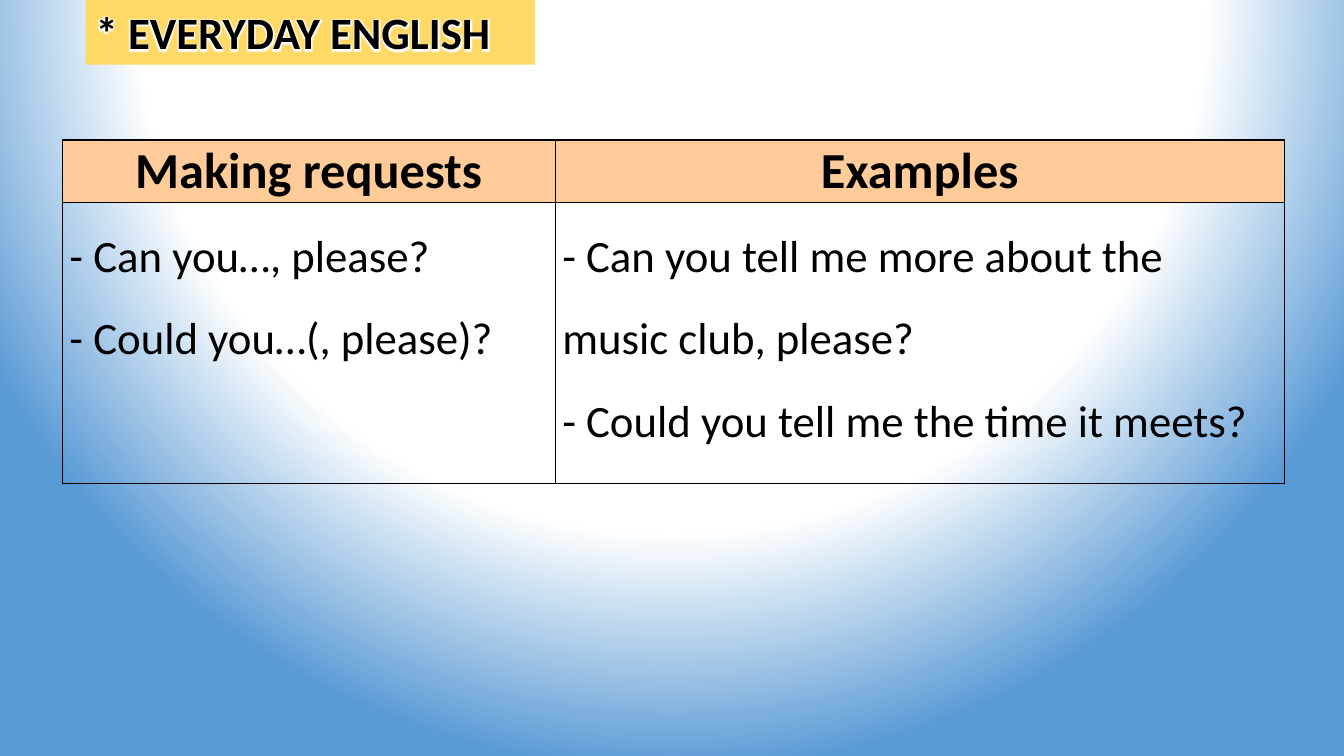
from dataclasses import dataclass

import pptx
import pptx.dml.color
import pptx.enum.shapes
import pptx.enum.text
import pptx.oxml
import pptx.oxml.ns
import pptx.util
from pptx.util import Cm, Pt

RGBColor = pptx.dml.color.RGBColor
PP_ALIGN = pptx.enum.text.PP_ALIGN

BLACK = RGBColor(0x00, 0x00, 0x00)
WHITE = RGBColor(0xFF, 0xFF, 0xFF)
SKY_BLUE = RGBColor(0x5B, 0x9B, 0xD5)
PEACH = RGBColor(0xFF, 0xCC, 0x99)
YELLOW = RGBColor(0xFF, 0xD9, 0x66)

FONT = "Calibri"
NAMESPACE = pptx.oxml.ns.nsdecls("a")


@dataclass(frozen=True)
class Column:
    heading: str
    phrases: tuple[str, ...]
    width: float
    spaces_before: tuple[float, ...]


COLUMNS = (
    Column("Making requests",
           ("- Can you…, please?", "- Could you…(, please)?"),
           12.42, (0, 0)),
    Column("Examples",
           ("- Can you tell me more about the music club, please?",
            "- Could you tell me the time it meets?"),
           18.38, (1.9, 0.5)),
)
ROW_HEIGHTS = (1.57, 7.08)


def write(paragraph, text: str, size: float, bold: bool):
    run = paragraph.add_run()
    run.text = text
    for name, value in {"name": FONT, "size": Pt(size), "bold": bold}.items():
        setattr(run.font, name, value)
    run.font.color.rgb = BLACK
    return run


def paint_background(slide) -> None:
    """Fill the slide with a radial gradient centred above its top edge."""
    slide.background.fill.solid()
    stops = "".join(
        f'<a:gs pos="{percent * 1000}"><a:srgbClr val="{color}"/></a:gs>'
        for percent, color in ((0, WHITE), (69, WHITE), (100, SKY_BLUE)))
    gradient = pptx.oxml.parse_xml(
        f'<a:gradFill {NAMESPACE} rotWithShape="1"><a:gsLst>{stops}</a:gsLst>'
        '<a:path path="circle"><a:fillToRect l="50000" t="-80000" '
        'r="50000" b="180000"/></a:path></a:gradFill>')
    solid = slide.element.find(".//" + pptx.oxml.ns.qn("a:solidFill"))
    solid.getparent().replace(solid, gradient)


def format_cell(cell) -> None:
    """Set the cell's insets and its thin black border."""
    margins = {"margin_left": 0.18, "margin_right": 0.18,
               "margin_top": 0, "margin_bottom": 0}
    for name, value in margins.items():
        setattr(cell, name, Cm(value))
    properties = cell._tc.get_or_add_tcPr()
    for side in "LRTB":
        properties.append(pptx.oxml.parse_xml(
            f'<a:ln{side} {NAMESPACE} w="{Pt(1)}"><a:solidFill>'
            f'<a:srgbClr val="{BLACK}"/></a:solidFill></a:ln{side}>'))


def add_requests_table(slide) -> None:
    table = slide.shapes.add_table(
        len(ROW_HEIGHTS), len(COLUMNS), Cm(1.57), Cm(3.53),
        Cm(sum(column.width for column in COLUMNS)),
        Cm(sum(ROW_HEIGHTS))).table
    table.first_row = table.horz_banding = False
    for row, height in zip(table.rows, ROW_HEIGHTS):
        row.height = Cm(height)

    for index, column in enumerate(COLUMNS):
        table.columns[index].width = Cm(column.width)
        heading, body = table.cell(0, index), table.cell(1, index)
        for cell in (heading, body):
            format_cell(cell)
        heading.fill.solid()
        heading.fill.fore_color.rgb = PEACH
        body.fill.background()

        title = heading.text_frame.paragraphs[0]
        title.alignment = PP_ALIGN.CENTER
        write(title, column.heading, 36, True)
        frame = body.text_frame
        for number, phrase in enumerate(column.phrases):
            line = frame.add_paragraph() if number else frame.paragraphs[0]
            line.line_spacing = 1.5
            line.space_before = Pt(column.spaces_before[number])
            write(line, phrase, 32, False)


def add_section_title(slide) -> None:
    banner = slide.shapes.add_shape(
        pptx.enum.shapes.MSO_SHAPE.RECTANGLE,
        Cm(2.16), Cm(0), Cm(11.33), Cm(1.63))
    banner.shadow.inherit = False
    banner.fill.solid()
    banner.fill.fore_color.rgb = YELLOW
    banner.line.fill.background()
    frame = banner.text_frame
    frame.word_wrap = True
    frame.auto_size = pptx.enum.text.MSO_AUTO_SIZE.SHAPE_TO_FIT_TEXT
    frame.vertical_anchor = pptx.enum.text.MSO_ANCHOR.TOP
    frame.paragraphs[0].alignment = PP_ALIGN.LEFT
    run = write(frame.paragraphs[0], "* EVERYDAY ENGLISH", 32, True)
    glow = pptx.oxml.parse_xml(
        f'<a:effectLst {NAMESPACE}><a:glow rad="{Pt(4)}">'
        f'<a:srgbClr val="{WHITE}"/></a:glow></a:effectLst>')
    run.font._element.find(pptx.oxml.ns.qn("a:solidFill")).addnext(glow)


def main() -> None:
    presentation = pptx.Presentation()
    presentation.slide_width = Cm(33.87)
    presentation.slide_height = Cm(19.05)
    slide = presentation.slides.add_slide(presentation.slide_layouts[6])
    paint_background(slide)
    add_requests_table(slide)
    add_section_title(slide)
    presentation.save("out.pptx")


if __name__ == "__main__":
    main()
